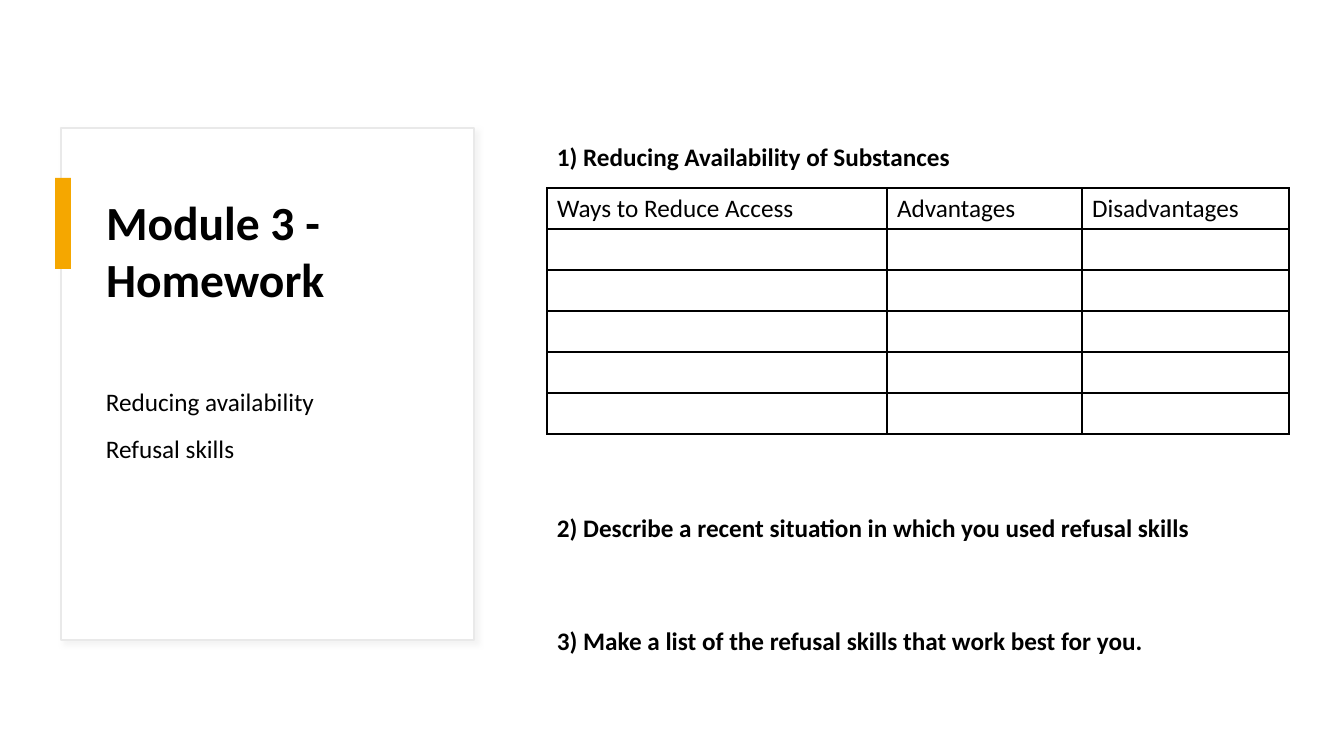
import pptx
import pptx.util
import pptx.dml.color
import pptx.enum.shapes
import pptx.enum.text
import pptx.oxml
import pptx.oxml.ns

PX = 914400 / 100.8
NS = pptx.oxml.ns.nsdecls("a")


def px(*lengths):
    return [pptx.util.Emu(round(length * PX)) for length in lengths]


def style(paragraph, size=18, bold=False):
    paragraph.alignment = pptx.enum.text.PP_ALIGN.LEFT
    font = paragraph.font
    for target in [font] + [run.font for run in paragraph.runs]:
        target.name = "Calibri"
        target.size = pptx.util.Pt(size)
        target.bold = bold
        target.color.rgb = pptx.dml.color.RGBColor.from_string("000000")


prs = pptx.Presentation()
prs.slide_width, prs.slide_height = px(1344, 756)
slide = prs.slides.add_slide(prs.slide_layouts[5])
shapes = slide.shapes

# Card and accent bar
for box, fill, outline in [((61, 128, 413, 512), "FFFFFF", "E9E9E9"),
                           ((55, 178, 16, 91), "F5A700", None)]:
    panel = shapes.add_shape(pptx.enum.shapes.MSO_SHAPE.RECTANGLE, *px(*box))
    panel.shadow.inherit = False
    panel.fill.solid()
    panel.fill.fore_color.rgb = pptx.dml.color.RGBColor.from_string(fill)
    if outline:
        panel.line.color.rgb = pptx.dml.color.RGBColor.from_string(outline)
        panel.line.width = pptx.util.Pt(1)
        effects = panel.element.spPr.find(pptx.oxml.ns.qn("a:effectLst"))
        effects.append(pptx.oxml.parse_xml(
            f'<a:outerShdw {NS} blurRad="50800" dist="38100" dir="2700000" algn="tl" rotWithShape="0">'
            '<a:srgbClr val="D9D9D9"><a:alpha val="30000"/></a:srgbClr></a:outerShdw>'))
    else:
        panel.line.fill.background()

# Title, brought in front of the card
title = shapes.title
title.left, title.top, title.width, title.height = px(96, 188, 342, 189)
title.text_frame.text = "Module 3 - Homework"
title.text_frame.word_wrap = True
title.text_frame.auto_size = pptx.enum.text.MSO_AUTO_SIZE.NONE
title.text_frame.vertical_anchor = pptx.enum.text.MSO_ANCHOR.TOP
style(title.text_frame.paragraphs[0], 34, True)
panel.element.addnext(title.element)

# Topics on the card
topics = shapes.add_textbox(*px(96, 378, 342, 228)).text_frame
topics.word_wrap = True
topics.text = "Reducing availability\nRefusal skills"
for topic in topics.paragraphs:
    topic.line_spacing = 1.1
    topic.space_before = pptx.util.Pt(10)
    style(topic)

# Worksheet table
headings = ["Ways to Reduce Access", "Advantages", "Disadvantages"]
column_widths = [340, 195, 207]
row_count, row_height = 6, 41
worksheet = shapes.add_table(
    row_count, len(headings),
    *px(547, 188, sum(column_widths), row_count * row_height)).table
worksheet.first_row = worksheet.horz_banding = False
for column, width in zip(worksheet.columns, px(*column_widths)):
    column.width = width
for row in worksheet.rows:
    row.height = px(row_height)[0]
for cell, heading in zip(worksheet.rows[0].cells, headings):
    cell.text = heading
for cell in worksheet.iter_cells():
    style(cell.text_frame.paragraphs[0])
    borders = cell._tc.get_or_add_tcPr()
    for side in "LRTB":
        borders.append(pptx.oxml.parse_xml(
            f'<a:ln{side} {NS} w="12700"><a:solidFill><a:srgbClr val="000000"/>'
            f'</a:solidFill></a:ln{side}>'))
    cell.fill.background()

# Homework questions
questions = [
    ("1) Reducing Availability of Substances", 136, 509, True),
    ("2) Describe a recent situation in which you used refusal skills", 507, 771, False),
    ("3) Make a list of the refusal skills that work best for you.", 620, 710, False),
]
for wording, top, width, wrap in questions:
    question = shapes.add_textbox(*px(547, top, width, 40)).text_frame
    question.word_wrap = wrap
    question.auto_size = pptx.enum.text.MSO_AUTO_SIZE.SHAPE_TO_FIT_TEXT
    question.text = wording
    style(question.paragraphs[0], bold=True)

prs.save("out.pptx")
